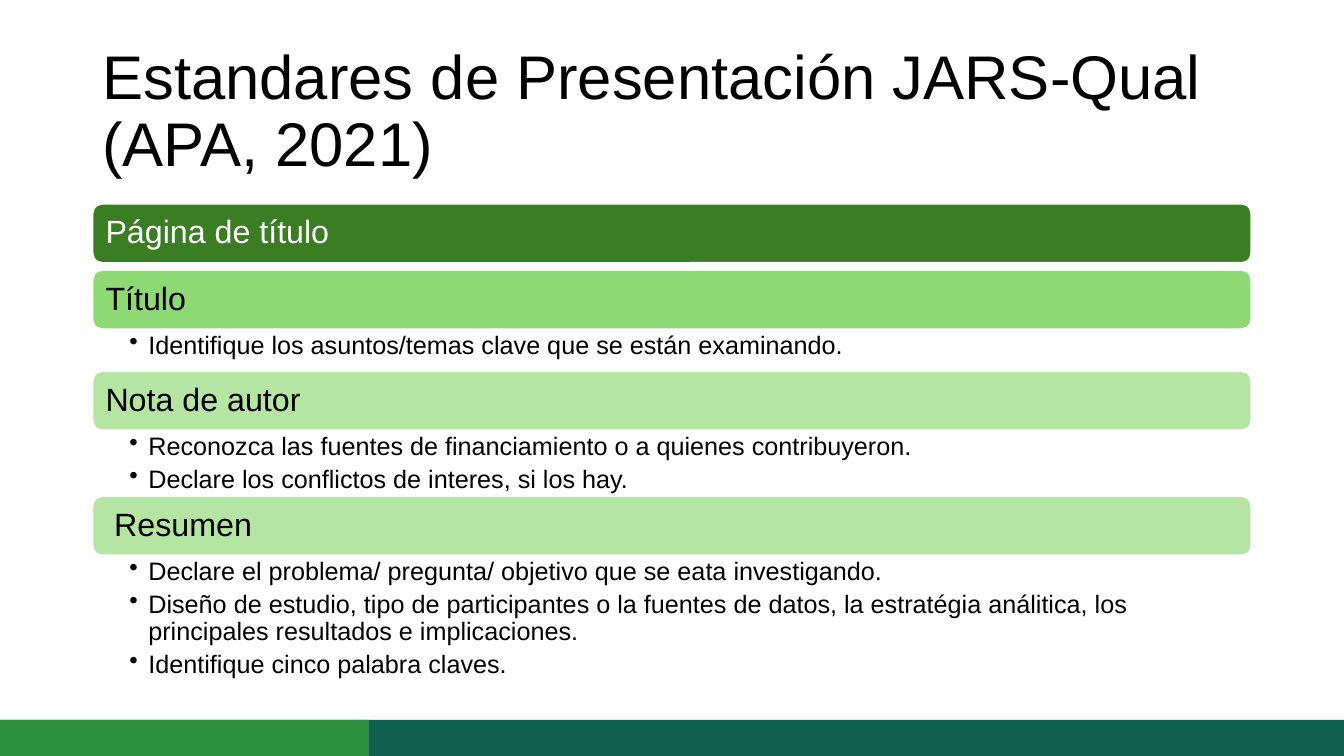
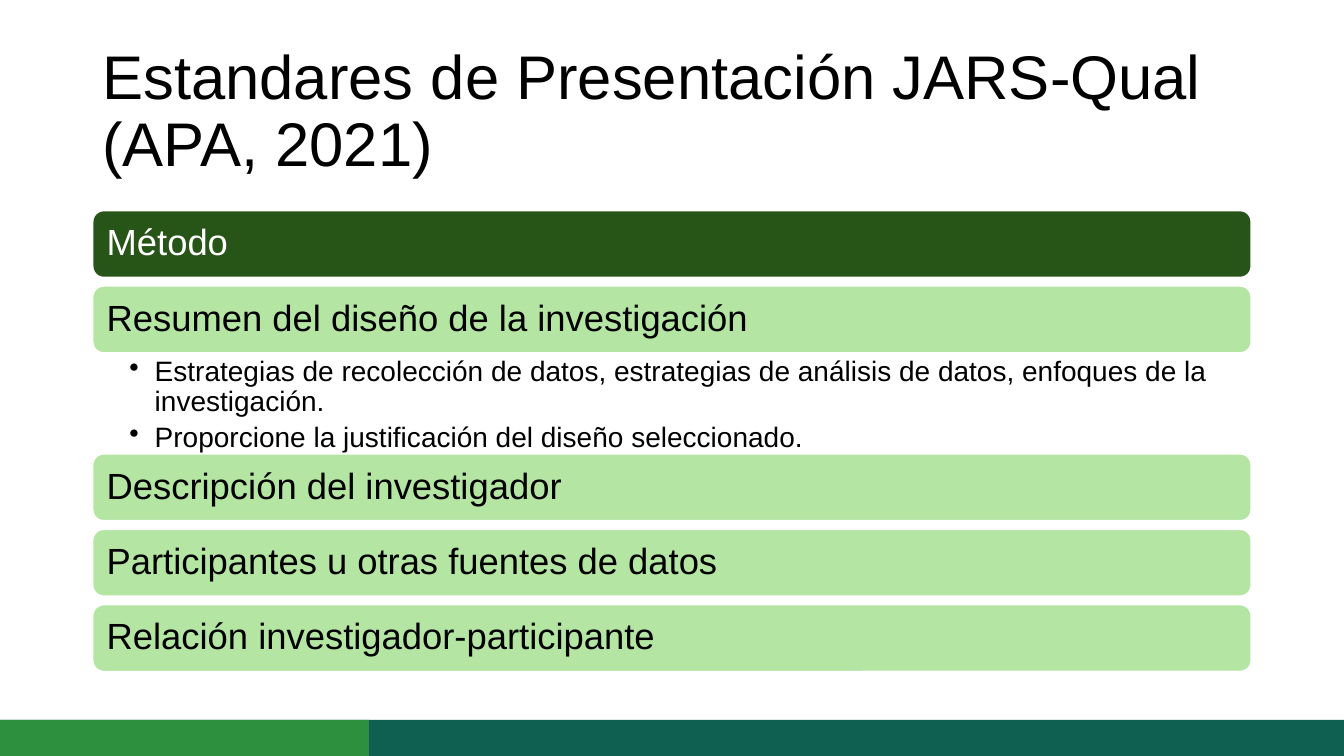
from dataclasses import dataclass
from lxml.etree import SubElement
from pptx import Presentation
from pptx.dml.color import RGBColor as RGB
from pptx.enum.shapes import MSO_SHAPE as Shape
from pptx.enum.text import MSO_ANCHOR as Anchor, PP_ALIGN as Align
from pptx.oxml.ns import qn
from pptx.util import Cm, Pt


@dataclass(frozen=True)
class Theme:
    font: str = "Arial"
    black: str = "000000"
    white: str = "FFFFFF"
    deep: str = "275417"
    dark: str = "3B7D23"
    mid: str = "8ED973"
    pale: str = "B4E5A2"
    teal: str = "0F6051"
    green: str = "2C903F"
    title: int = 44


theme = Theme()
WIDE, HIGH = 33.87, 19.05
LEFT, WIDTH = 2.33, 29.21
BAND = 0.91
TITLE = "Estandares de Presentación JARS-Qual (APA, 2021)"

# Lengths in cm. Each row: heading, fill, text colour, extra indent,
# height of the bullet box, bullets.
pages = [
    dict(top=5.13, bar=1.5, gap=0.17, pad=0.33, head=23, body=18,
         hang=0.48, right=0.46, inset=0.08, rows=[
             ("Página de título", theme.dark, theme.white, 0, 0, []),
             ("Título", theme.mid, theme.black, 0, 1.05, [
                 "Identifique los asuntos/temas clave que se están examinando.",
             ]),
             ("Nota de autor", theme.pale, theme.black, 0, 1.65, [
                 "Reconozca las fuentes de financiamiento o a quienes contribuyeron.",
                 "Declare los conflictos de interes, si los hay.",
             ]),
             ("Resumen", theme.pale, theme.black, 0.22, 3.1, [
                 "Declare el problema/ pregunta/ objetivo que se eata investigando.",
                 "Diseño de estudio, tipo de participantes o la fuentes de datos, "
                 "la estratégia análitica, los principales resultados e implicaciones.",
                 "Identifique cinco palabra claves.",
             ]),
         ]),
    dict(top=5.3, bar=1.7, gap=0.2, pad=0.36, head=26, body=20,
         hang=0.64, right=0.5, inset=0.1, rows=[
             ("Método", theme.deep, theme.white, 0, 0, []),
             ("Resumen del diseño de la investigación",
              theme.pale, theme.black, 0, 2.53, [
                  "Estrategias de recolección de datos, estrategias de análisis "
                  "de datos, enfoques de la investigación.",
                  "Proporcione la justificación del diseño seleccionado.",
              ]),
             ("Descripción del investigador", theme.pale, theme.black, 0, 0, []),
             ("Participantes u otras fuentes de datos",
              theme.pale, theme.black, 0, 0, []),
             ("Relación investigador-participante",
              theme.pale, theme.black, 0, 0, []),
         ]),
]


def block(slide, kind, left, top, width, height, fill):
    shape = slide.shapes.add_shape(kind, Cm(left), Cm(top), Cm(width), Cm(height))
    shape.shadow.inherit = False
    shape.fill.solid()
    shape.fill.fore_color.rgb = RGB.from_string(fill)
    shape.line.fill.background()
    return shape


def write(frame, lines, size, color, hang=0):
    """Fill a text frame; a hang in cm makes each line a bullet."""
    frame.word_wrap = True
    for i, line in enumerate(lines):
        para = frame.add_paragraph() if i else frame.paragraphs[0]
        para.text = line
        if hang:
            props = para._p.get_or_add_pPr()
            props.set("marL", str(Cm(hang)))
            props.set("indent", str(-Cm(hang)))
            SubElement(props, qn("a:buChar")).set("char", "•")
            para.space_after = Pt(4)
        para.alignment = Align.LEFT
        para.line_spacing = 0.9
        para.font.name = theme.font
        para.font.size = Pt(size)
        para.font.color.rgb = RGB.from_string(color)


deck = Presentation()
deck.slide_width, deck.slide_height = Cm(WIDE), Cm(HIGH)

for page in pages:
    slide = deck.slides.add_slide(deck.slide_layouts[6])
    title = slide.shapes.add_textbox(Cm(LEFT), Cm(1.01), Cm(WIDTH), Cm(3.68))
    title.text_frame.vertical_anchor = Anchor.MIDDLE
    write(title.text_frame, [TITLE], theme.title, theme.black)

    top = page["top"]
    for head, fill, color, shift, depth, points in page["rows"]:
        bar = block(slide, Shape.ROUNDED_RECTANGLE,
                    LEFT, top, WIDTH, page["bar"], fill)
        bar.line.color.rgb = RGB.from_string(theme.white)
        bar.line.width = Pt(1.5)
        frame = bar.text_frame
        frame.vertical_anchor = Anchor.MIDDLE
        # The frame of a rounded shape already starts inside its corners.
        inner = page["bar"] * 0.16667 * 0.29289
        frame.margin_left = Cm(page["pad"] + shift - inner)
        frame.margin_top = frame.margin_bottom = 0
        write(frame, [head], page["head"], color)
        top += page["bar"]

        if points:
            box = slide.shapes.add_textbox(Cm(LEFT), Cm(top), Cm(WIDTH), Cm(depth))
            frame = box.text_frame
            frame.margin_left, frame.margin_right = Cm(0.93), Cm(page["right"])
            frame.margin_top = frame.margin_bottom = Cm(page["inset"])
            write(frame, points, page["body"], theme.black, page["hang"])
        top += depth or page["gap"]

    for width, fill in ((WIDE, theme.teal), (9.3, theme.green)):
        block(slide, Shape.RECTANGLE, 0, HIGH - BAND, width, BAND, fill)

deck.save("out.pptx")
